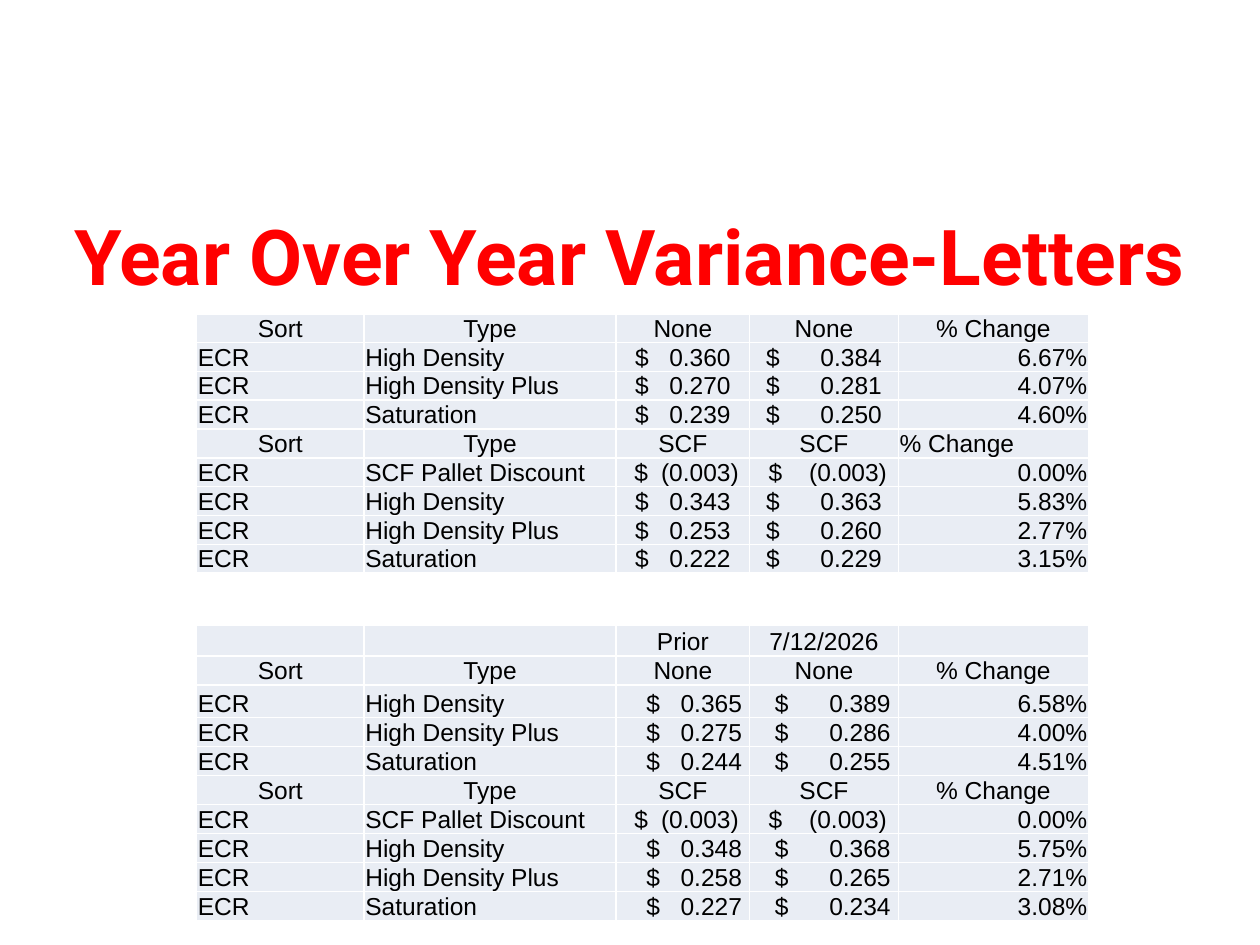
from lxml import etree
from pptx import Presentation
from pptx.dml.color import RGBColor
from pptx.enum.text import MSO_ANCHOR, PP_ALIGN
from pptx.oxml.ns import qn
from pptx.util import Inches, Pt

LEFT, CENTER, RIGHT = PP_ALIGN.LEFT, PP_ALIGN.CENTER, PP_ALIGN.RIGHT
MIDDLE, BOTTOM = MSO_ANCHOR.MIDDLE, MSO_ANCHOR.BOTTOM
RED = RGBColor(0xFF, 0x00, 0x00)
BLACK = RGBColor(0x00, 0x00, 0x00)
PALE_BLUE = RGBColor(0xE9, 0xED, 0xF4)
WHITE = RGBColor(0xFF, 0xFF, 0xFF)

TITLE = "Year Over Year Variance-Letters"
NONE_HEAD = ("Sort", "Type", "None", "None", "% Change")
SCF_HEAD = ("Sort", "Type", "SCF", "SCF", "% Change")
DISCOUNT = ("ECR", "SCF Pallet Discount", "(0.003)", "(0.003)", "0.00%")

UPPER_ROWS = [
    NONE_HEAD,
    ("ECR", "High Density", "0.360", "0.384", "6.67%"),
    ("ECR", "High Density Plus", "0.270", "0.281", "4.07%"),
    ("ECR", "Saturation", "0.239", "0.250", "4.60%"),
    SCF_HEAD,
    DISCOUNT,
    ("ECR", "High Density", "0.343", "0.363", "5.83%"),
    ("ECR", "High Density Plus", "0.253", "0.260", "2.77%"),
    ("ECR", "Saturation", "0.222", "0.229", "3.15%"),
]
LOWER_ROWS = [
    ("", "", "Prior", "7/12/2026", ""),
    NONE_HEAD,
    ("ECR", "High Density", "0.365", "0.389", "6.58%"),
    ("ECR", "High Density Plus", "0.275", "0.286", "4.00%"),
    ("ECR", "Saturation", "0.244", "0.255", "4.51%"),
    SCF_HEAD,
    DISCOUNT,
    ("ECR", "High Density", "0.348", "0.368", "5.75%"),
    ("ECR", "High Density Plus", "0.258", "0.265", "2.71%"),
    ("ECR", "Saturation", "0.227", "0.234", "3.08%"),
]

COL_WIDTHS = (1.33, 2, 1.06, 1.18, 1.51)
COL_ALIGNS = (LEFT, LEFT, LEFT, LEFT, RIGHT)
PRICE_SPANS = {2: 0.76, 3: 0.92}
DISCOUNT_SPANS = {2: 0.83, 3: 0.94}
PAD = 0.01


def add_borders(cell):
    tcPr = cell._tc.get_or_add_tcPr()
    for side in ("lnL", "lnR", "lnT", "lnB"):
        ln = etree.SubElement(tcPr, qn(f"a:{side}"), w=str(Pt(1)))
        fill = etree.SubElement(ln, qn("a:solidFill"))
        etree.SubElement(fill, qn("a:srgbClr"), val=str(WHITE))


def add_price(cell, col, value, price_align):
    p = cell.text_frame.paragraphs[0]
    width = COL_WIDTHS[col]
    if value.startswith("("):
        span = DISCOUNT_SPANS[col]
        start = (width - span) / 2 + 0.03
    else:
        span = PRICE_SPANS[col]
        start = (width - span) / 2 if price_align == CENTER else width - span - 0.06
    cell.margin_left = Inches(start)
    tabs = etree.SubElement(p._p.get_or_add_pPr(), qn("a:tabLst"))
    etree.SubElement(tabs, qn("a:tab"), pos=str(Inches(span)), algn="r")
    p.text = f"$\t{value}"


def fill_cell(cell, col, value, is_head, price_align):
    cell.margin_left = cell.margin_right = cell.margin_top = Inches(PAD)
    cell.margin_bottom = 0
    cell.vertical_anchor = BOTTOM
    add_borders(cell)
    cell.fill.solid()
    cell.fill.fore_color.rgb = PALE_BLUE
    p = cell.text_frame.paragraphs[0]
    if not value:
        etree.SubElement(p._p, qn("a:endParaRPr"), sz="1400")
        return
    p.alignment = CENTER if is_head else COL_ALIGNS[col]
    if col in PRICE_SPANS and not is_head:
        add_price(cell, col, value, price_align)
    else:
        p.text = value
    for r in p.runs:
        r.font.size = Pt(14)
        r.font.name = "Arial"
        r.font.color.rgb = BLACK


def add_rate_table(s, rows, top, height, row_height, price_align):
    frame = s.shapes.add_table(len(rows), len(COL_WIDTHS), Inches(1.56),
                               Inches(top), Inches(sum(COL_WIDTHS)), Inches(height))
    table = frame.table
    table.first_row = table.horz_banding = False
    for column, width in zip(table.columns, COL_WIDTHS):
        column.width = Inches(width)
    for i, row in enumerate(rows):
        table.rows[i].height = Inches(row_height)
        for col, value in enumerate(row):
            fill_cell(table.cell(i, col), col, value, row[0] != "ECR", price_align)
    return table


prs = Presentation()
prs.slide_width, prs.slide_height = Inches(10), Inches(7.5)
s = prs.slides.add_slide(prs.slide_layouts[0])
subtitle = s.placeholders[1].element
subtitle.getparent().remove(subtitle)

title = s.shapes.title
title.left, title.top = Inches(0.25), Inches(1.45)
title.width, title.height = Inches(9.5), Inches(1.14)
tf = title.text_frame
tf.text = TITLE
tf.vertical_anchor = MIDDLE
p = tf.paragraphs[0]
p.alignment = CENTER
font = p.runs[0].font
font.name, font.size, font.bold = "Roboto", Pt(44), True
font.color.rgb = RED

upper = add_rate_table(s, UPPER_ROWS, 2.49, 2.17, 0.21, CENTER)
upper.cell(4, 4).text_frame.paragraphs[0].alignment = LEFT
lower = add_rate_table(s, LOWER_ROWS, 4.96, 2.44, 0.23, RIGHT)
lower.rows[2].height = Inches(0.26)

prs.save("out.pptx")
